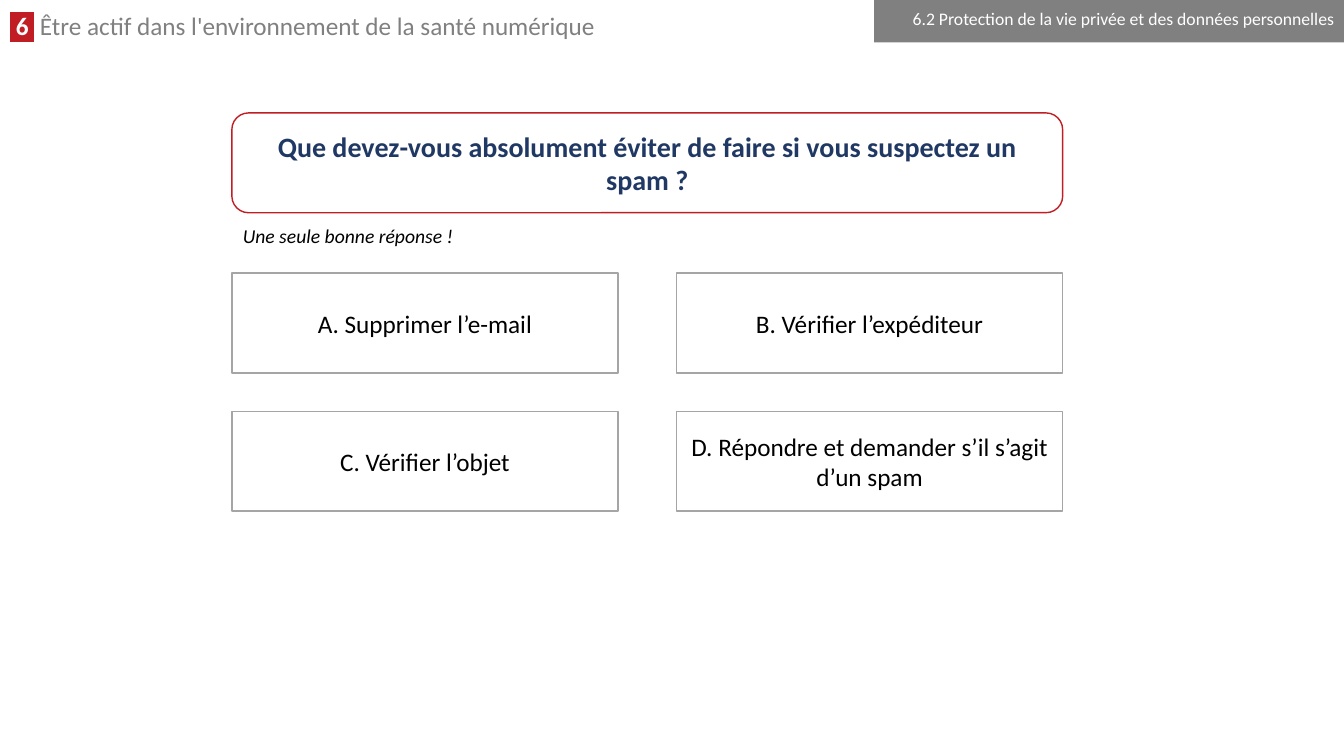
from lxml import etree
from pptx import Presentation
from pptx import util as u
from pptx.dml.color import RGBColor
from pptx.enum import shapes, text
from pptx.oxml.ns import qn

FONT = "Calibri"
RED, GREY, WHITE, BLACK = "C01E24", "808080", "FFFFFF", "000000"
KIND = shapes.MSO_SHAPE
ALIGN = text.PP_ALIGN


def color(code):
    return RGBColor.from_string(code)


def style(font, size, code, bold=False, italic=False):
    font.name, font.size = FONT, u.Pt(size)
    font.bold, font.italic = bold, italic
    font.color.rgb = color(code)


def mark(run, code):
    """Highlight a run whose font color is already set."""
    light = etree.Element(qn("a:highlight"))
    etree.SubElement(light, qn("a:srgbClr")).set("val", code)
    run.font.fill._xPr.find(qn("a:solidFill")).addnext(light)


def block(slide, box, kind, words, size, ink, fill=WHITE, line=None,
          align=ALIGN.CENTER, bold=False):
    shape = slide.shapes.add_shape(kind, *map(u.Inches, box))
    shape.shadow.inherit = False
    shape.fill.solid()
    shape.fill.fore_color.rgb = color(fill)
    if line:
        shape.line.color.rgb = color(line)
        shape.line.width = u.Pt(1)
    else:
        shape.line.fill.background()
    frame = shape.text_frame
    frame.word_wrap = True
    frame.vertical_anchor = text.MSO_ANCHOR.MIDDLE
    para = frame.paragraphs[0]
    para.text, para.alignment = words, align
    style(para.font, size, ink, bold)
    return para


def header(slide, box, number, words):
    title = slide.shapes.title
    title.left, title.top, title.width, title.height = map(u.Inches, box)
    frame = title.text_frame
    frame.auto_size = text.MSO_AUTO_SIZE.NONE
    frame.vertical_anchor = text.MSO_ANCHOR.TOP
    para = frame.paragraphs[0]
    para.alignment, para.line_spacing = ALIGN.LEFT, 0.8
    badge, label = para.add_run(), para.add_run()
    badge.text, label.text = f" {number} ", f" {words}"
    style(badge.font, 18, WHITE, bold=True)
    style(label.font, 18, GREY)
    mark(badge, RED)


def section(slide, box, words):
    para = block(slide, box, KIND.RECTANGLE, words, 12.6, WHITE, GREY,
                 align=ALIGN.RIGHT)
    para.line_spacing = 0.7


def hint(slide, box, words):
    frame = slide.shapes.add_textbox(*map(u.Inches, box)).text_frame
    frame.word_wrap = False
    para = frame.paragraphs[0]
    para.text = words
    style(para.font, 14, BLACK, italic=True)


def quiz(slide, box, question, note, answers):
    left, top, width, height = box
    tall, wide = 0.99, 3.83
    # Question and hint
    block(slide, (left, top, width, tall), KIND.ROUNDED_RECTANGLE,
          question, 20, "203864", line=RED, bold=True)
    hint(slide, (left + 0.01, top + 1.05, 2.3, 0.34), note)
    # Answers in two columns, against the bottom of the box
    step, pitch = width - wide, 1.37
    first = top + height - tall - pitch
    for i, answer in enumerate(answers):
        row, col = divmod(i, 2)
        spot = (left + col * step, first + row * pitch, wide, tall)
        block(slide, spot, KIND.RECTANGLE, f"{'ABCD'[i]}. {answer}",
              18, BLACK, line="A5A5A5")


def main():
    deck = Presentation()
    deck.slide_width, deck.slide_height = u.Inches(13.33), u.Inches(7.5)
    slide = deck.slides.add_slide(deck.slide_layouts[5])
    header(slide, (0, 0.11, 8.6, 0.35), 6,
           "Être actif dans l'environnement de la santé numérique")
    quiz(slide, (2.3, 1.12, 8.24, 3.95),
         "Que devez-vous absolument éviter de faire si vous suspectez un spam ?",
         "Une seule bonne réponse !",
         ["Supprimer l’e-mail", "Vérifier l’expéditeur",
          "Vérifier l’objet", "Répondre et demander s’il s’agit d’un spam"])
    section(slide, (8.67, 0, 4.66, 0.42),
            "6.2 Protection de la vie privée et des données personnelles")
    deck.save("out.pptx")


if __name__ == "__main__":
    main()
